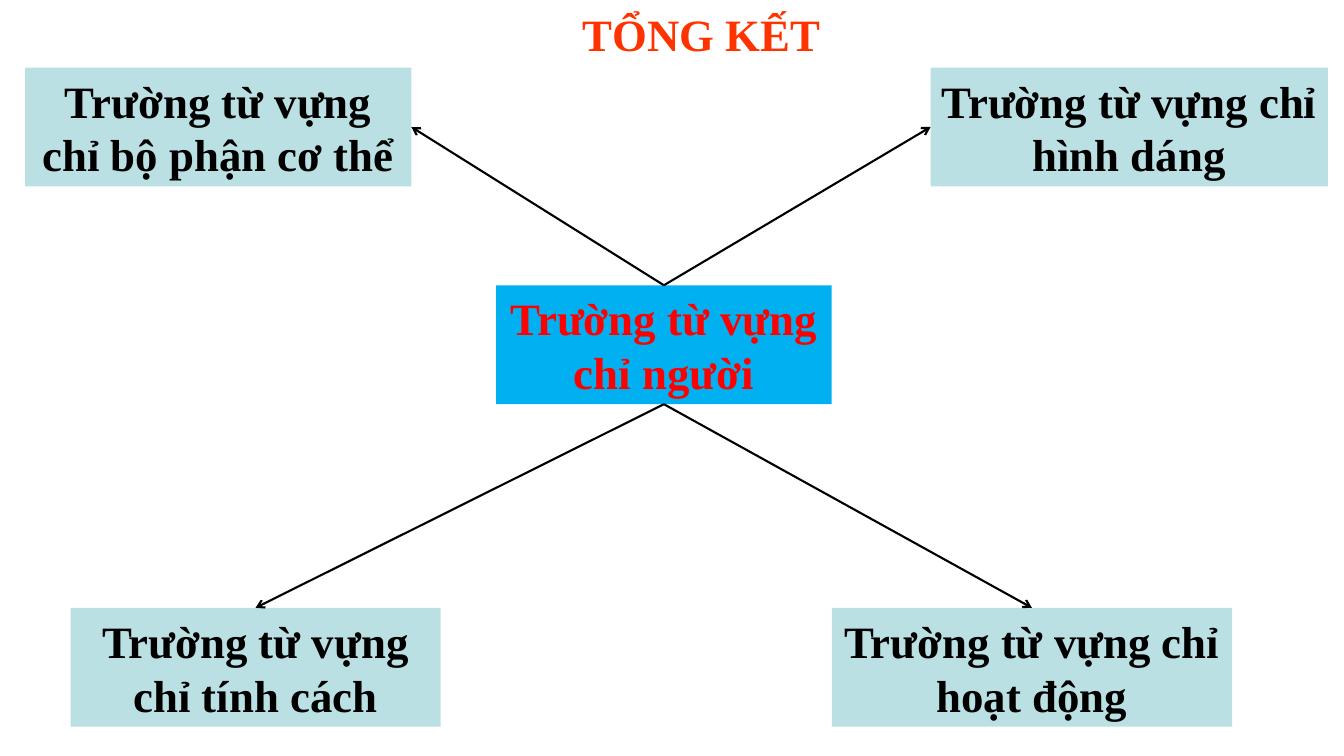
from lxml import etree
from pptx import Presentation
from pptx import util as u
from pptx.dml.color import RGBColor
from pptx.enum import shapes, text
from pptx.oxml.ns import qn

COLORS = {"title": "FF3300", "topic": "FF0000", "topic_fill": "00B0F0",
          "branch": "000000", "branch_fill": "BBE0E3", "arrow": "000000"}
BOX_HEIGHT = 1.18
TOP, LEFT, RIGHT, BOTTOM = 0, 1, 3, 2
TOPIC = ("Trường từ vựng\nchỉ người", 4.92, 2.83, 3.33)
# wording, left, top, width, side of the topic, side of the branch
BRANCHES = [
    ("Trường từ vựng chỉ bộ phận cơ thể", 0.25, 0.67, 3.83, TOP, RIGHT),
    ("Trường từ vựng chỉ hình dáng", 9.23, 0.67, 3.94, TOP, LEFT),
    ("Trường từ vựng chỉ tính cách", 0.7, 6.03, 3.67, BOTTOM, TOP),
    ("Trường từ vựng chỉ hoạt động", 8.25, 6.03, 3.97, BOTTOM, TOP),
]


def write(shape, wording, color, alignment):
    frame = shape.text_frame
    frame.text = wording
    frame.vertical_anchor = text.MSO_ANCHOR.MIDDLE
    for paragraph in frame.paragraphs:
        paragraph.alignment = alignment
        font = paragraph.font
        font.name, font.size, font.bold = "Times New Roman", u.Pt(32), True
        font.color.rgb = RGBColor.from_string(COLORS[color])


def add_title(slide, wording, left, top, width, height):
    title = slide.shapes.title
    title.left, title.top = u.Inches(left), u.Inches(top)
    title.width, title.height = u.Inches(width), u.Inches(height)
    write(title, wording, "title", text.PP_ALIGN.LEFT)
    title.text_frame.word_wrap = False
    title.text_frame.auto_size = text.MSO_AUTO_SIZE.NONE


def add_box(slide, wording, left, top, width, role):
    box = slide.shapes.add_shape(
        shapes.MSO_SHAPE.RECTANGLE, u.Inches(left), u.Inches(top),
        u.Inches(width), u.Inches(BOX_HEIGHT))
    box.shadow.inherit = False
    box.fill.solid()
    box.fill.fore_color.rgb = RGBColor.from_string(COLORS[role + "_fill"])
    box.line.fill.background()
    write(box, wording, role, text.PP_ALIGN.CENTER)
    box.text_frame.word_wrap = True
    return box


def add_arrow(slide, topic, topic_side, branch, branch_side):
    arrow = slide.shapes.add_connector(shapes.MSO_CONNECTOR.STRAIGHT, 0, 0, 0, 0)
    arrow.begin_connect(topic, topic_side)
    arrow.end_connect(branch, branch_side)
    arrow.line.width = u.Pt(1.5)
    arrow.line.color.rgb = RGBColor.from_string(COLORS["arrow"])
    etree.SubElement(arrow.line._get_or_add_ln(), qn("a:tailEnd"), type="arrow")
    etree.SubElement(arrow._element.spPr, qn("a:effectLst"))


def add_mind_map(slide):
    topic = add_box(slide, *TOPIC, "topic")
    for wording, left, top, width, topic_side, branch_side in BRANCHES:
        branch = add_box(slide, wording, left, top, width, "branch")
        add_arrow(slide, topic, topic_side, branch, branch_side)


def main():
    presentation = Presentation()
    presentation.slide_width = u.Inches(13.33)
    presentation.slide_height = u.Inches(7.5)
    slide = presentation.slides.add_slide(presentation.slide_layouts[5])
    add_title(slide, "TỔNG KẾT", 5.68, 0, 4.25, 0.67)
    add_mind_map(slide)
    presentation.save("out.pptx")


if __name__ == "__main__":
    main()
